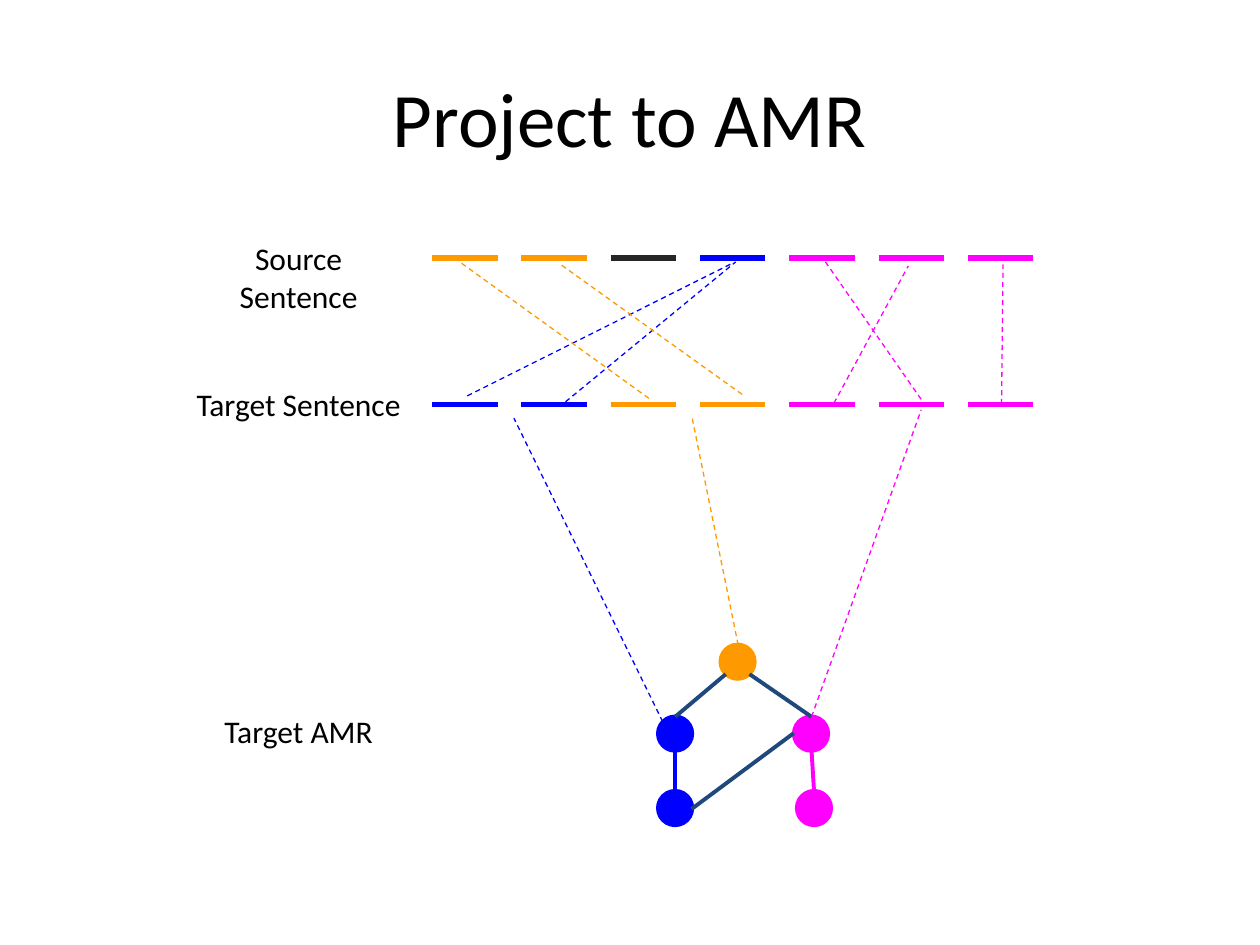
from dataclasses import dataclass

from lxml import etree
from pptx import Presentation
from pptx.dml.color import RGBColor
from pptx.enum.dml import MSO_LINE
from pptx.enum.shapes import MSO_CONNECTOR, MSO_SHAPE
from pptx.enum.text import MSO_ANCHOR, PP_ALIGN
from pptx.oxml.ns import qn
from pptx.slide import Slide
from pptx.util import Cm, Pt

STRAIGHT = MSO_CONNECTOR.STRAIGHT
OVAL = MSO_SHAPE.OVAL
DASH = MSO_LINE.DASH
CENTER = PP_ALIGN.CENTER
TOP, MIDDLE = MSO_ANCHOR.TOP, MSO_ANCHOR.MIDDLE

ORANGE = RGBColor(0xFF, 0x99, 0x00)
BLUE = RGBColor(0x00, 0x00, 0xFF)
PINK = RGBColor(0xFF, 0x00, 0xFF)
NAVY = RGBColor(0x1F, 0x49, 0x7D)
GRAY = RGBColor(0x26, 0x26, 0x26)
BLACK = RGBColor(0x00, 0x00, 0x00)

FONT = "Calibri"
WORD_LEFT, WORD_WIDTH, WORD_STEP = 8.71, 1.32, 1.8
NODE_SIZE = 0.69


@dataclass
class Label:
    text: str
    left: float
    top: float
    width: float
    height: float
    size: int = 18
    anchor: MSO_ANCHOR = TOP


@dataclass
class Row:
    y: float
    colors: list[RGBColor]


@dataclass
class Node:
    """A graph node, placed by its centre."""
    x: float
    y: float
    color: RGBColor


@dataclass
class Line:
    x1: float
    y1: float
    x2: float
    y2: float
    color: RGBColor
    width: float = 2.25
    dashed: bool = False


def link(x1: float, y1: float, x2: float, y2: float, color: RGBColor) -> Line:
    """Return a thin dashed alignment line."""
    return Line(x1, y1, x2, y2, color, 0.75, True)


LABELS = [
    Label("Project to AMR", 1.27, 0.76, 22.86, 3.18, 44, MIDDLE),
    *(Label(text, 3.71, top, 4.62, 1.27) for text, top in [
        ("Source Sentence", 4.57),
        ("Target Sentence", 7.52),
        ("Target AMR", 14.1),
    ]),
]

ROWS = [
    Row(5.2, [ORANGE, ORANGE, GRAY, BLUE, PINK, PINK, PINK]),
    Row(8.15, [BLUE, BLUE, ORANGE, ORANGE, PINK, PINK, PINK]),
]

NODES = [
    Node(14.87, 13.34, ORANGE),
    Node(13.61, 14.79, BLUE),
    Node(13.61, 16.29, BLUE),
    Node(16.35, 14.79, PINK),
    Node(16.41, 16.29, PINK),
]

EDGES = [
    Line(13.61, 14.45, 14.63, 13.59, NAVY),
    Line(13.61, 15.95, 13.61, 15.14, BLUE),
    Line(15.11, 13.59, 16.36, 14.45, NAVY),
    Line(16.41, 15.95, 16.36, 15.14, PINK),
    Line(16, 14.78, 13.94, 16.31, NAVY),
]

LINKS = [
    # Target words to source words
    link(9.42, 7.98, 14.76, 5.31, BLUE),
    link(11.4, 8.1, 14.83, 5.28, BLUE),
    link(16.81, 8.13, 18.31, 5.36, PINK),
    link(18.57, 8.05, 16.64, 5.28, PINK),
    link(20.19, 8.15, 20.22, 5.33, PINK),
    link(13.08, 8.03, 9.17, 5.21, ORANGE),
    link(14.96, 7.95, 11.3, 5.33, ORANGE),
    # Graph nodes to target words
    link(13.36, 14.55, 10.36, 8.43, BLUE),
    link(14.88, 13, 13.94, 8.36, ORANGE),
    link(16.36, 14.45, 18.57, 8.26, PINK),
]


def add_label(slide: Slide, label: Label) -> None:
    box = slide.shapes.add_textbox(
        Cm(label.left), Cm(label.top), Cm(label.width), Cm(label.height))
    frame = box.text_frame
    frame.word_wrap = True
    frame.vertical_anchor = label.anchor
    frame.margin_left = frame.margin_right = Cm(0.25)
    frame.margin_top = frame.margin_bottom = Cm(0.25)
    para = frame.paragraphs[0]
    para.alignment = CENTER
    run = para.add_run()
    run.text = label.text
    run.font.name = FONT
    run.font.size = Pt(label.size)
    run.font.color.rgb = BLACK


def add_line(slide: Slide, line: Line) -> None:
    shape = slide.shapes.add_connector(
        STRAIGHT, Cm(line.x1), Cm(line.y1), Cm(line.x2), Cm(line.y2))
    shape.line.color.rgb = line.color
    shape.line.width = Pt(line.width)
    if line.dashed:
        shape.line.dash_style = DASH
    etree.SubElement(shape.element.spPr, qn("a:effectLst"))


def add_row(slide: Slide, row: Row) -> None:
    """Draw one sentence as evenly spaced word strokes."""
    for i, color in enumerate(row.colors):
        x = WORD_LEFT + i * WORD_STEP
        add_line(slide, Line(x, row.y, x + WORD_WIDTH, row.y, color, 3))


def add_node(slide: Slide, node: Node) -> None:
    half = NODE_SIZE / 2
    shape = slide.shapes.add_shape(
        OVAL, Cm(node.x - half), Cm(node.y - half), Cm(NODE_SIZE), Cm(NODE_SIZE))
    shape.shadow.inherit = False
    shape.fill.solid()
    shape.fill.fore_color.rgb = node.color
    shape.line.color.rgb = node.color
    shape.line.width = Pt(2.25)


def main() -> None:
    deck = Presentation()
    deck.slide_width, deck.slide_height = Cm(25.4), Cm(19.05)
    slide = deck.slides.add_slide(deck.slide_layouts[6])
    for label in LABELS:
        add_label(slide, label)
    for row in ROWS:
        add_row(slide, row)
    for node in NODES:
        add_node(slide, node)
    for line in EDGES + LINKS:
        add_line(slide, line)
    deck.save("out.pptx")


if __name__ == "__main__":
    main()
